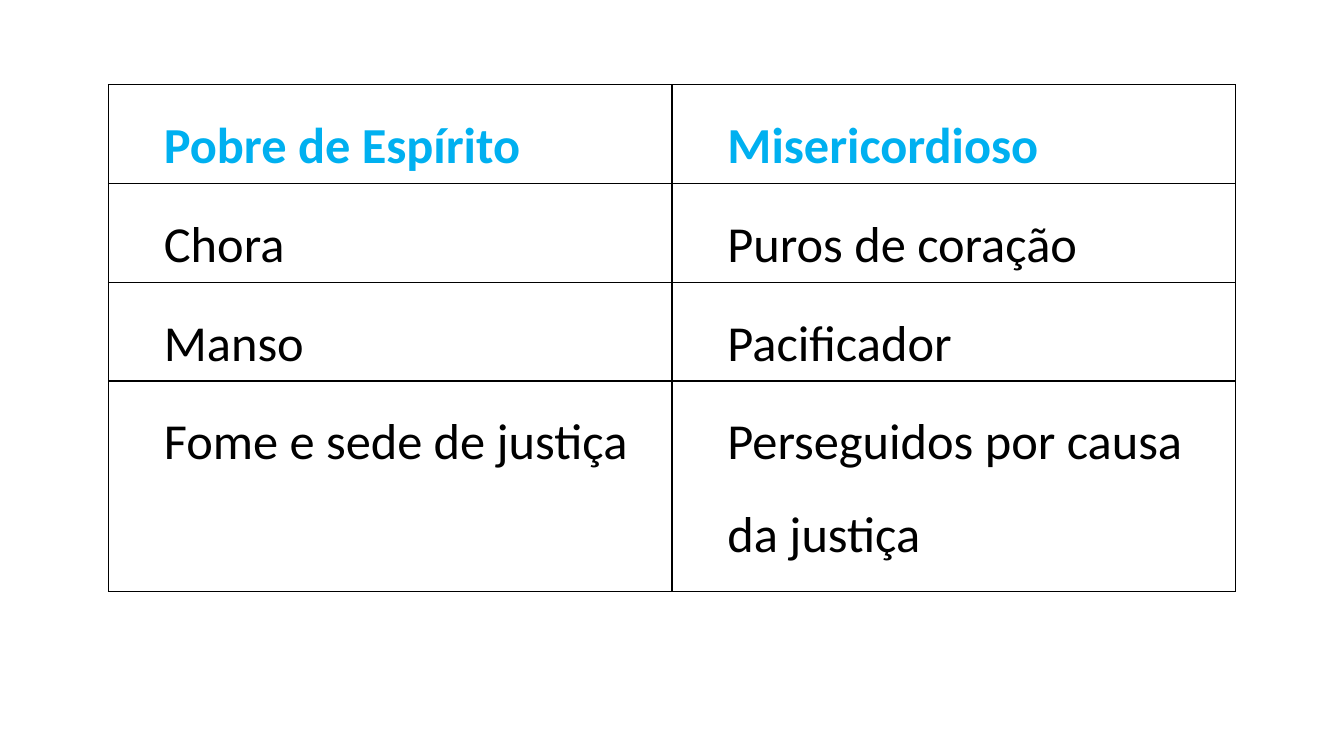
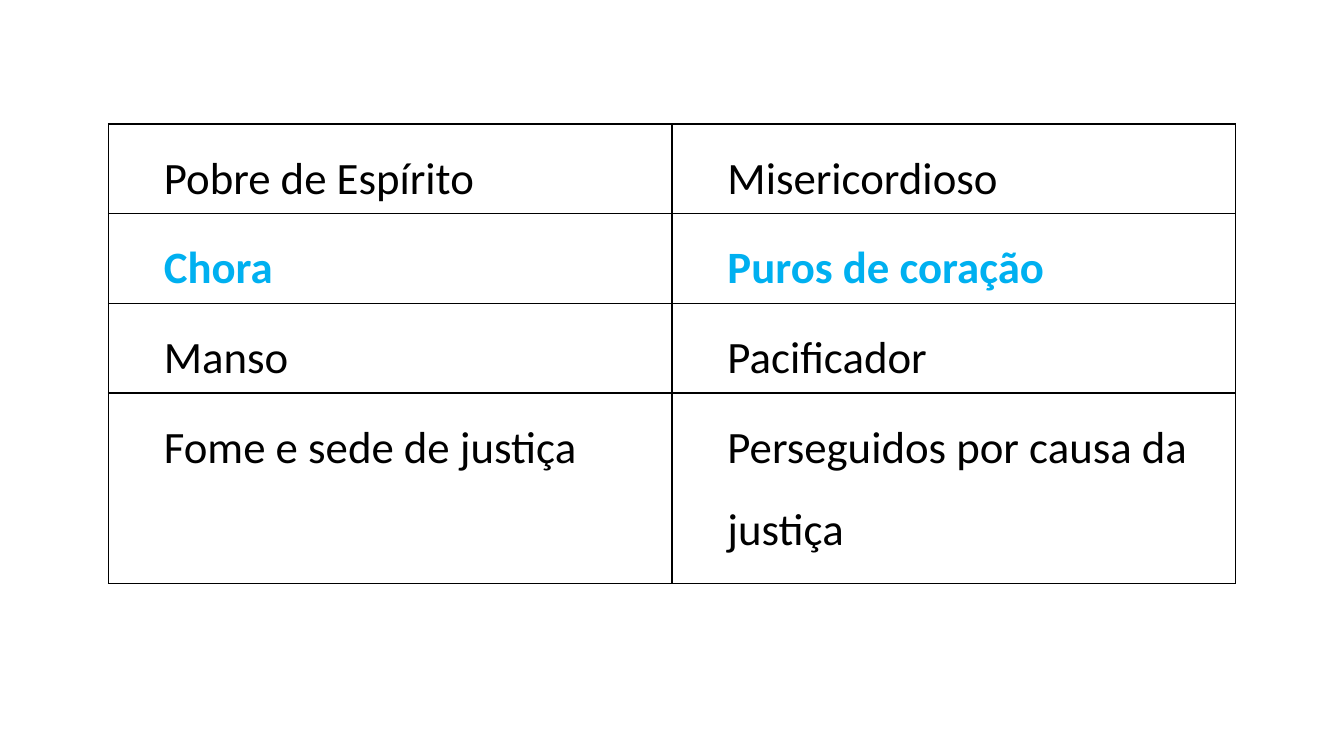
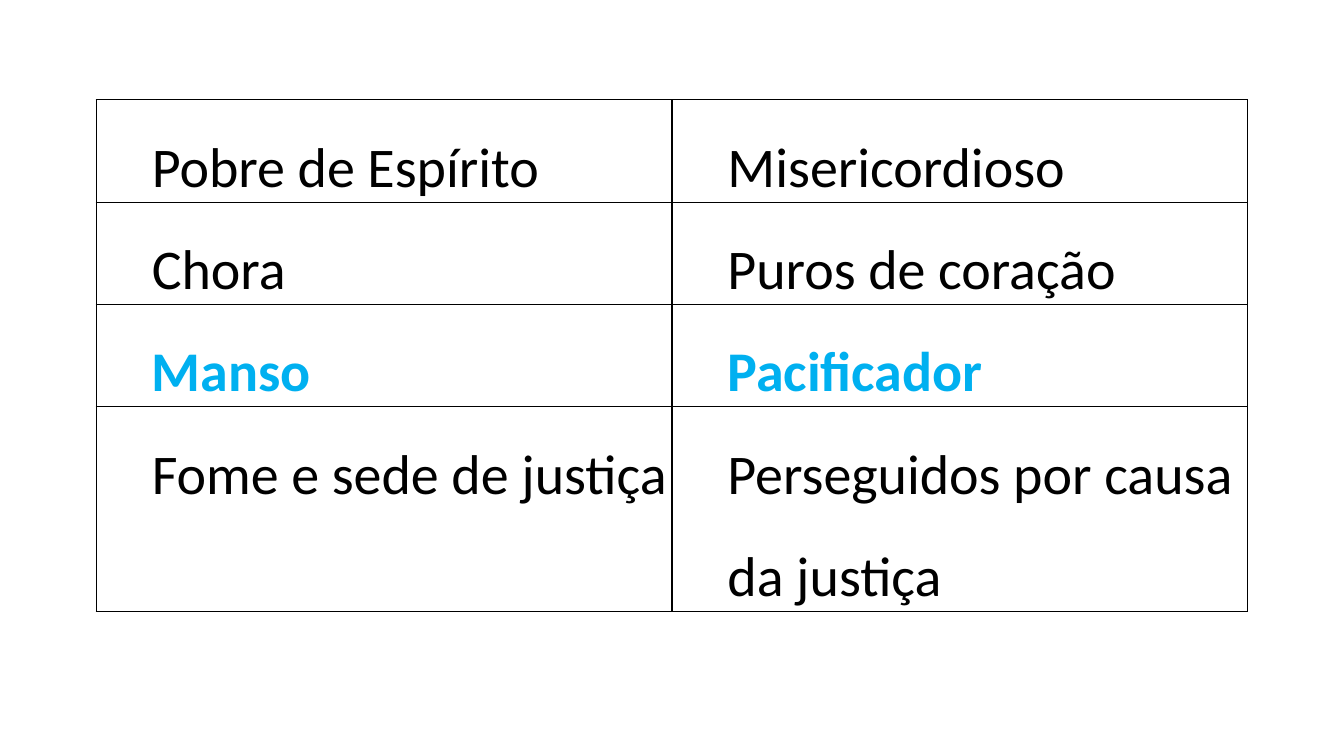
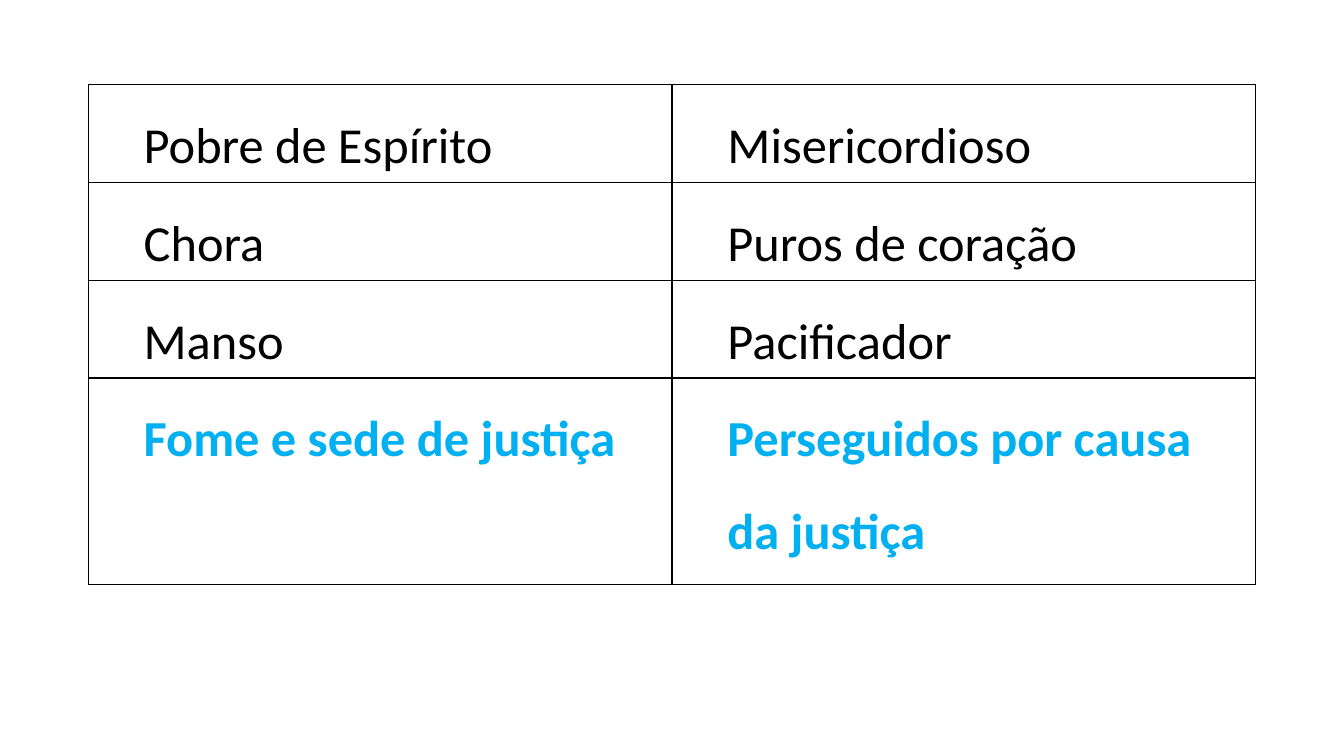
import pptx
import pptx.dml.color
import pptx.oxml
import pptx.oxml.ns
import pptx.util

BLACK = pptx.dml.color.RGBColor(0x00, 0x00, 0x00)
BLUE = pptx.dml.color.RGBColor(0x00, 0xB0, 0xF0)
FONT = "Calibri"
SLIDE_W, SLIDE_H = 13.33, 7.5
INDENT = pptx.util.Inches(0.5)

BEATITUDES = [
    ("Pobre de Espírito", "Misericordioso"),
    ("Chora", "Puros de coração"),
    ("Manso", "Pacificador"),
    ("Fome e sede de justiça", "Perseguidos por causa da justiça"),
]

# One slide per highlighted row: top, column width, row height, last row height, text size
LAYOUTS = [
    (0.84, 5.59, 0.98, 2.09, 36),
    (1.23, 5.59, 0.89, 1.89, 32),
    (0.99, 5.71, 0.97, 2.0, 40),
    (0.84, 5.79, 0.97, 2.05, 36),
]


def add_borders(cell):
    """Draw a 1 pt black line on all four sides; call before setting the fill."""
    tcPr = cell._tc.get_or_add_tcPr()
    for side in "LRTB":
        tcPr.append(pptx.oxml.parse_xml(
            f'<a:ln{side} {pptx.oxml.ns.nsdecls("a")} w="{pptx.util.Pt(1)}">'
            f'<a:solidFill><a:srgbClr val="{BLACK}"/></a:solidFill></a:ln{side}>'))


prs = pptx.Presentation()
prs.slide_width = pptx.util.Inches(SLIDE_W)
prs.slide_height = pptx.util.Inches(SLIDE_H)

for highlight, (top, col_w, row_h, last_h, size) in enumerate(LAYOUTS):
    s = prs.slides.add_slide(prs.slide_layouts[6])
    heights = [row_h] * (len(BEATITUDES) - 1) + [last_h]
    width = 2 * col_w
    left = (SLIDE_W - width) / 2
    table = s.shapes.add_table(
        len(BEATITUDES), 2, pptx.util.Inches(left), pptx.util.Inches(top),
        pptx.util.Inches(width), pptx.util.Inches(sum(heights))).table
    table.first_row = False
    table.horz_banding = False
    for column in table.columns:
        column.width = pptx.util.Inches(col_w)

    for row, (texts, height) in enumerate(zip(BEATITUDES, heights)):
        table.rows[row].height = pptx.util.Inches(height)
        for col, text in enumerate(texts):
            cell = table.cell(row, col)
            cell.margin_left = cell.margin_right = pptx.util.Inches(0.05)
            cell.margin_top = cell.margin_bottom = 0
            add_borders(cell)
            cell.fill.background()
            p = cell.text_frame.paragraphs[0]
            p.line_spacing = 1.5
            pPr = p._p.get_or_add_pPr()
            pPr.set("marL", str(INDENT))
            pPr.set("indent", "0")
            r = p.add_run()
            r.text = text
            r.font.name = FONT
            r.font.size = pptx.util.Pt(size)
            r.font.bold = row == highlight
            r.font.color.rgb = BLUE if row == highlight else BLACK

prs.save("out.pptx")
